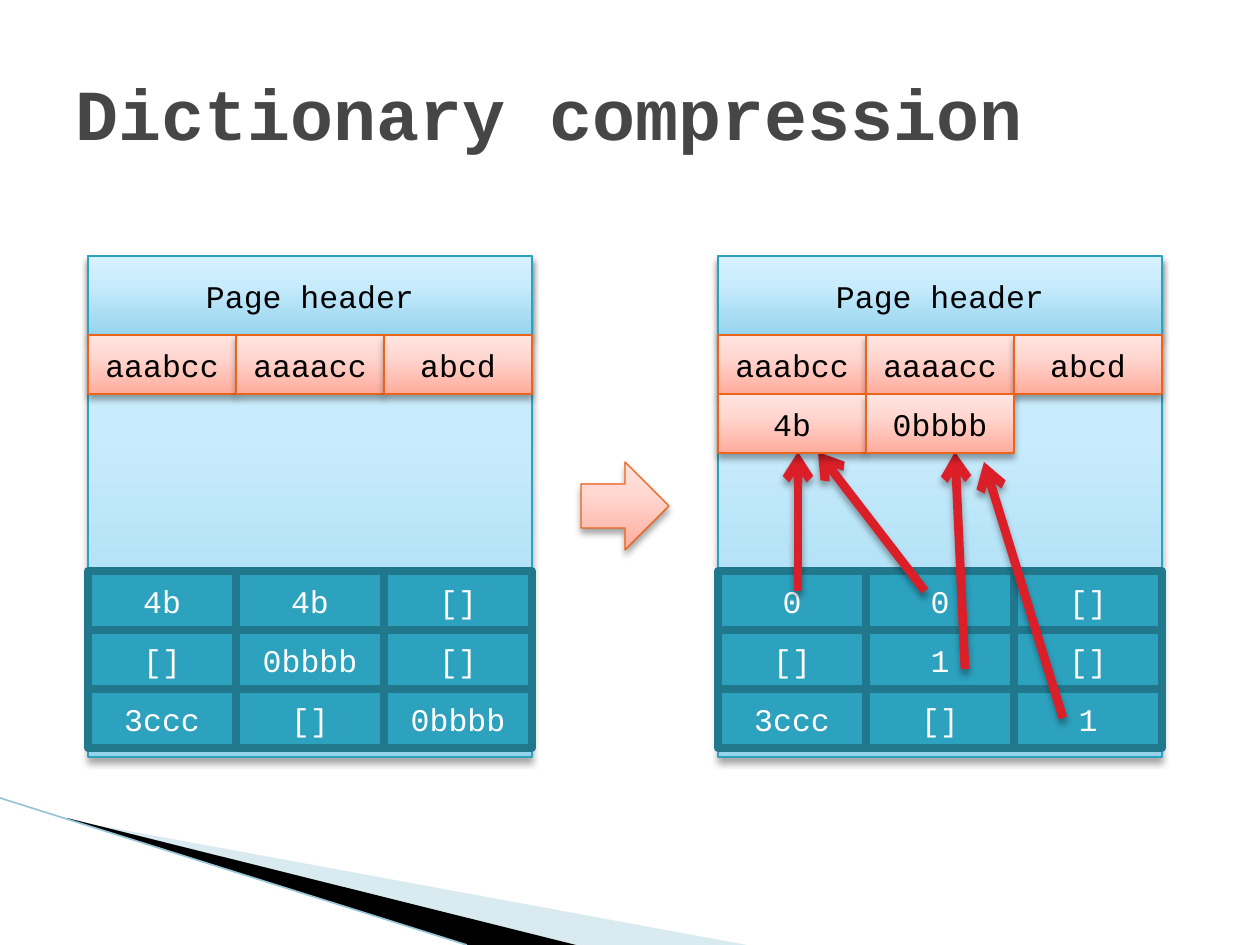
from lxml import etree
from pptx import Presentation
from pptx.dml.color import RGBColor
from pptx.enum.shapes import MSO_CONNECTOR, MSO_SHAPE
from pptx.enum.text import MSO_ANCHOR, MSO_AUTO_SIZE, PP_ALIGN
from pptx.oxml.ns import qn
from pptx.util import Pt

RECTANGLE, RIGHT_ARROW = MSO_SHAPE.RECTANGLE, MSO_SHAPE.RIGHT_ARROW
STRAIGHT = MSO_CONNECTOR.STRAIGHT
MIDDLE, CENTER, LEFT = MSO_ANCHOR.MIDDLE, PP_ALIGN.CENTER, PP_ALIGN.LEFT
NO_AUTOFIT = MSO_AUTO_SIZE.NONE

# Content
TITLE = "Dictionary compression"
HEADER = "Page header"
PREFIXES = ["aaabcc", "aaaacc", "abcd"]
DICTIONARY = ["4b", "0bbbb"]
PAGES = [
    {"left": 88, "rows": [["4b", "4b", "[]"],
                          ["[]", "0bbbb", "[]"],
                          ["3ccc", "[]", "0bbbb"]]},
    {"left": 718, "rows": [["0", "0", "[]"],
                           ["[]", "1", "[]"],
                           ["3ccc", "[]", "1"]]},
]
REFERENCES = [  # from a stored index to its dictionary entry
    ((925, 591), (818, 452)),
    ((798, 591), (798, 452)),
    ((1063, 718), (984, 462)),
    ((965, 669), (955, 452)),
]

# Layout in px
SCALE = 914400 / 126
SLIDE_SIZE = (1260, 945)
TITLE_BOX = (63, 49, 1134, 126)
CELL_WIDTH, CELL_HEIGHT = 148, 59
PAGE_TOP, PAGE_WIDTH, PAGE_HEIGHT = 256, 3 * CELL_WIDTH, 501
HEADER_HEIGHT = 79
PREFIX_TOP = PAGE_TOP + HEADER_HEIGHT
DICTIONARY_TOP = PREFIX_TOP + CELL_HEIGHT
DATA_TOP = 571
BIG_ARROW_BOX = (581, 462, 88, 88)
PALE_WEDGE = [(69, 820), (747, 945), (575, 945), (69, 819)]
BLACK_WEDGE = [(67, 818), (576, 945), (467, 945), (68, 819)]
EDGE_LINE = ((0, 798), (467, 945))

THEME = {
    "font": "Courier New", "title_size": 41, "cell_size": 18,
    "title": "464646", "wedge": "A0CBDC", "black": "000000",
    "edge": "97C5D8", "edge_width": 0.95,
    "reference": "DA1F28", "reference_width": 5,
    "page": {"gradient": [(0, "96D4EE"), (65, "C9ECFC"), (100, "D7F2FF")],
             "line": "2DA2BF", "width": 0.75, "text": "000000"},
    "entry": {"gradient": [(0, "FFAC9C"), (65, "FFD8D2"), (100, "FFE4DF")],
              "line": "EB641B", "width": 0.75, "text": "000000"},
    "data": {"fill": "2DA2BF", "line": "21788D", "width": 4.33,
             "text": "FFFFFF"},
}


def px(value):
    return round(value * SCALE)


def color(name):
    return RGBColor.from_string(name)


def add_color(parent, name, alpha=None):
    element = etree.SubElement(parent, qn("a:srgbClr"), val=name)
    if alpha is not None:
        etree.SubElement(element, qn("a:alpha"), val=str(alpha * 1000))


def set_effects(shape, shadow):
    properties = shape._element.spPr
    for old in properties.findall(qn("a:effectLst")):
        properties.remove(old)
    effects = etree.SubElement(properties, qn("a:effectLst"))
    if shadow:
        outer = etree.SubElement(
            effects, qn("a:outerShdw"), blurRad=str(Pt(4)), dist=str(Pt(3)),
            dir="5400000", rotWithShape="0")
        add_color(outer, THEME["black"], 35)


def set_gradient(shape, stops):
    shape.fill.gradient()
    shape.fill.gradient_angle = 90
    stop_list = shape._element.spPr.find(".//" + qn("a:gsLst"))
    for old in list(stop_list):
        stop_list.remove(old)
    for position, name in stops:
        stop = etree.SubElement(stop_list, qn("a:gs"), pos=str(position * 1000))
        add_color(stop, name)


def write(shape, text, size, name, alignment, bold=False):
    frame = shape.text_frame
    frame.word_wrap = True
    frame.auto_size = NO_AUTOFIT
    frame.vertical_anchor = MIDDLE
    paragraph = frame.paragraphs[0]
    paragraph.text = text
    paragraph.alignment = alignment
    paragraph.font.name = THEME["font"]
    paragraph.font.size = Pt(size)
    paragraph.font.bold = bold
    paragraph.font.color.rgb = color(name)


def add_block(slide, box, style, text="", kind=RECTANGLE):
    shape = slide.shapes.add_shape(kind, *map(px, box))
    if "gradient" in style:
        set_gradient(shape, style["gradient"])
    else:
        shape.fill.solid()
        shape.fill.fore_color.rgb = color(style["fill"])
    shape.line.color.rgb = color(style["line"])
    shape.line.width = Pt(style["width"])
    set_effects(shape, shadow="gradient" in style)
    if text:
        write(shape, text, THEME["cell_size"], style["text"], CENTER)


def add_row(slide, left, top, texts, style):
    for column, text in enumerate(texts):
        box = (left + column * CELL_WIDTH, top, CELL_WIDTH, CELL_HEIGHT)
        add_block(slide, box, style, text)


def add_page(slide, left, rows):
    page = THEME["page"]
    add_block(slide, (left, PAGE_TOP, PAGE_WIDTH, PAGE_HEIGHT), page)
    add_block(slide, (left, PAGE_TOP, PAGE_WIDTH, HEADER_HEIGHT), page, HEADER)
    for index, row in enumerate(rows):
        add_row(slide, left, DATA_TOP + index * CELL_HEIGHT, row, THEME["data"])
    add_row(slide, left, PREFIX_TOP, PREFIXES, THEME["entry"])


def add_line(slide, start, end, name, width, arrow=False):
    line = slide.shapes.add_connector(STRAIGHT, *map(px, start + end))
    line.line.color.rgb = color(name)
    line.line.width = Pt(width)
    if arrow:
        outline = line._element.spPr.find(qn("a:ln"))
        etree.SubElement(outline, qn("a:tailEnd"), type="arrow")
    set_effects(line, shadow=arrow)


def add_wedge(slide, points, name, alpha=100):
    builder = slide.shapes.build_freeform(*points[0], scale=SCALE)
    builder.add_line_segments(points[1:], close=True)
    wedge = builder.convert_to_shape()
    wedge.fill.solid()
    wedge.fill.fore_color.rgb = color(name)
    wedge.line.fill.background()
    wedge.shadow.inherit = False
    if alpha < 100:
        fill = wedge._element.spPr.find(qn("a:solidFill"))
        etree.SubElement(fill[0], qn("a:alpha"), val=str(alpha * 1000))


def main():
    presentation = Presentation()
    presentation.slide_width, presentation.slide_height = map(px, SLIDE_SIZE)
    slide = presentation.slides.add_slide(presentation.slide_layouts[5])

    # Corner decoration
    add_wedge(slide, PALE_WEDGE, THEME["wedge"], 40)
    add_wedge(slide, BLACK_WEDGE, THEME["black"])
    add_line(slide, *EDGE_LINE, THEME["edge"], THEME["edge_width"])

    # Title
    title = slide.shapes.title
    title.left, title.top, title.width, title.height = map(px, TITLE_BOX)
    write(title, TITLE, THEME["title_size"], THEME["title"], LEFT, bold=True)

    # Pages before and after compression
    for page in PAGES:
        add_page(slide, page["left"], page["rows"])

    # References and the dictionary they point to
    for start, end in REFERENCES:
        add_line(slide, start, end, THEME["reference"],
                 THEME["reference_width"], arrow=True)
    add_row(slide, PAGES[1]["left"], DICTIONARY_TOP, DICTIONARY, THEME["entry"])

    # Step arrow between the pages
    add_block(slide, BIG_ARROW_BOX, THEME["entry"], kind=RIGHT_ARROW)

    presentation.save("out.pptx")


if __name__ == "__main__":
    main()
